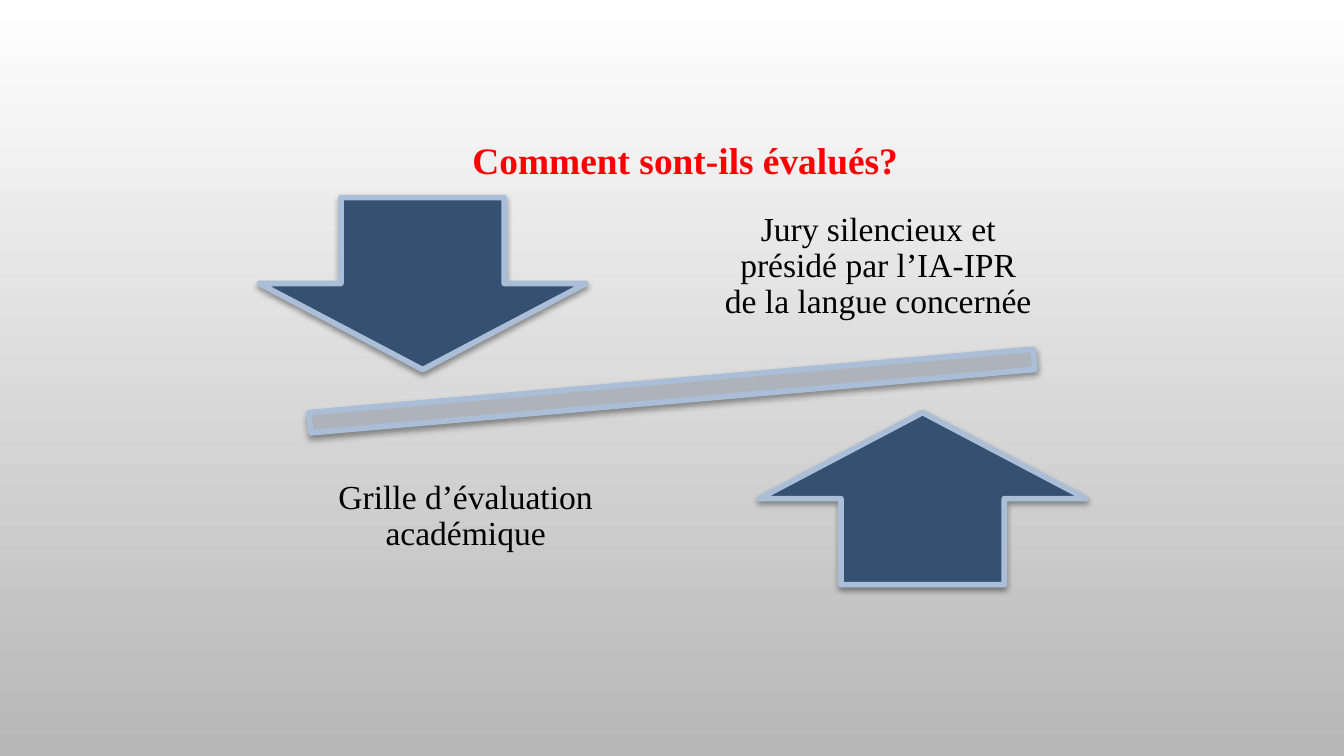
import pptx
import pptx.dml.color
import pptx.enum.shapes
import pptx.enum.text
import pptx.oxml
import pptx.oxml.ns
import pptx.util
from pptx.util import Inches

COLORS = {
    "top": "FFFFFF",
    "bottom": "B7B7B7",
    "bar": "AEB3BB",
    "arrow": "355071",
    "outline": "AABED7",
    "text": "000000",
    "title": "FF0000",
}
SHADOW = (
    '<a:outerShdw xmlns:a="http://schemas.openxmlformats.org/drawingml/2006/main" '
    'blurRad="39400" dist="20300" dir="5400000" rotWithShape="0">'
    '<a:srgbClr val="000000"><a:alpha val="38000"/></a:srgbClr></a:outerShdw>'
)


def color(name):
    return pptx.dml.color.RGBColor.from_string(COLORS[name])


def add_text(text, left, top, width, height, size=18, fill="text", bold=False,
             side_inset=0.14, end_inset=0.14, spacing=0.9,
             anchor=pptx.enum.text.MSO_ANCHOR.MIDDLE):
    box = slide.shapes.add_textbox(Inches(left), Inches(top), Inches(width), Inches(height))
    frame = box.text_frame
    frame.word_wrap = True
    frame.vertical_anchor = anchor
    frame.margin_left = frame.margin_right = Inches(side_inset)
    frame.margin_top = frame.margin_bottom = Inches(end_inset)
    paragraph = frame.paragraphs[0]
    paragraph.alignment = pptx.enum.text.PP_ALIGN.CENTER
    paragraph.line_spacing = spacing
    run = paragraph.add_run()
    run.text = text
    run.font.name = "Times New Roman"
    run.font.size = pptx.util.Pt(size)
    run.font.bold = bold
    run.font.color.rgb = color(fill)
    return box


presentation = pptx.Presentation()
presentation.slide_width = Inches(10)
presentation.slide_height = Inches(10 * 9 / 16)
slide = presentation.slides.add_slide(presentation.slide_layouts[6])

background = slide.background.fill
background.gradient()
background.gradient_angle = 270
for position, name in enumerate(("top", "bottom")):
    stop = background.gradient_stops[position]
    stop.position = position
    stop.color.rgb = color(name)

kinds = pptx.enum.shapes.MSO_SHAPE
balance_parts = [
    (kinds.MATH_MINUS, 1.32, 2.59, 7.36, 0.64, 355, "bar"),
    (kinds.DOWN_ARROW, 1.93, 1.47, 2.43, 1.28, 0, "arrow"),
    (kinds.UP_ARROW, 5.65, 3.07, 2.43, 1.28, 0, "arrow"),
]
for kind, left, top, width, height, rotation, fill in balance_parts:
    shape = slide.shapes.add_shape(kind, Inches(left), Inches(top), Inches(width), Inches(height))
    shape.rotation = rotation
    shape.fill.solid()
    shape.fill.fore_color.rgb = color(fill)
    shape.line.color.rgb = color("outline")
    shape.line.width = pptx.util.Pt(3)
    shape.shadow.inherit = False
    effects = shape._element.spPr.find(pptx.oxml.ns.qn("a:effectLst"))
    effects.append(pptx.oxml.parse_xml(SHADOW))

add_text("Jury silencieux et présidé par l’IA-IPR de la langue concernée", 5.24, 1.31, 2.59, 1.35)
add_text("Grille d’évaluation académique", 2.17, 3.17, 2.59, 1.35)
title = add_text("Comment sont-ils évalués?", 2.9, 0.97, 4.4, 0.44, size=20, fill="title", bold=True,
                 side_inset=0.1, end_inset=0.05, spacing=1.0,
                 anchor=pptx.enum.text.MSO_ANCHOR.TOP)
title.text_frame.auto_size = pptx.enum.text.MSO_AUTO_SIZE.SHAPE_TO_FIT_TEXT

presentation.save("out.pptx")
